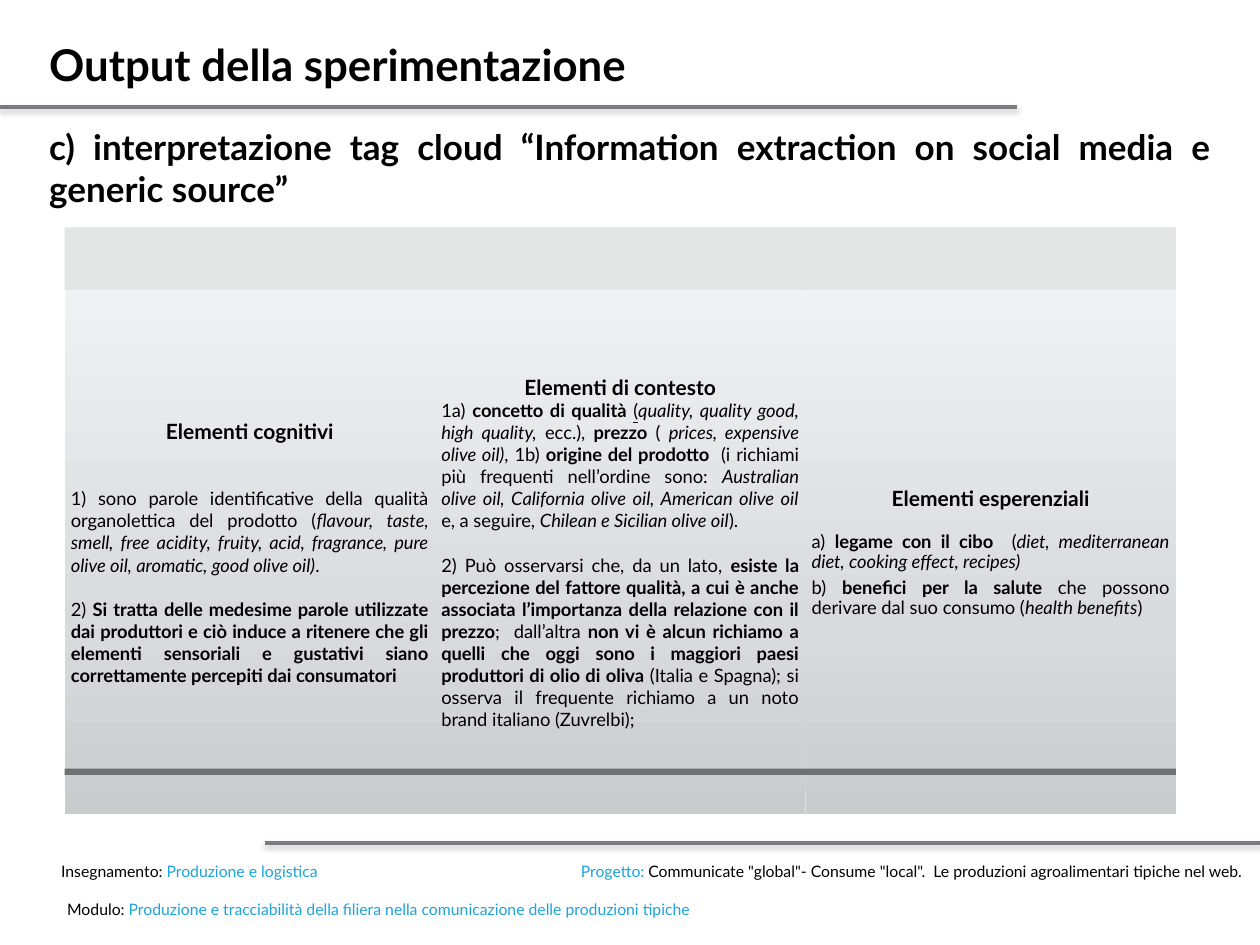
import copy

import pptx
import pptx.dml.color
import pptx.enum.shapes
import pptx.enum.text
import pptx.oxml
import pptx.util
from pptx.enum.text import MSO_ANCHOR, PP_ALIGN
from pptx.util import Pt

FONT = "Lato"
BLACK, BLUE, RULE = "000000", "1EA3DB", "797B7E"
GRADIENT = [(0, "C9CBCD"), (0.35, "D9DADC"), (1, "F0F1F2")]

# Content: text runs are (text, style), with b, i, u for bold, italic, underline
TITLE = "Output della sperimentazione"
SUBTITLE = "c) interpretazione tag cloud “Information extraction on social media e generic source”"

# Each column: heading, then paragraphs as (space before, line spacing, runs)
COLUMNS = [
    ("Elementi cognitivi", [
        (25.2, 1, [
            ("1) sono parole identificative della qualità organolettica del prodotto (", ""),
            ("flavour, taste, smell, free acidity, fruity, acid, fragrance, pure olive oil, "
             "aromatic, good olive oil)", "i"),
            (".", "")]),
        (12.6, 1, [
            ("2) ", ""),
            ("Si tratta delle medesime parole utilizzate dai produttori e ciò induce a ritenere "
             "che gli elementi sensoriali e gustativi siano correttamente percepiti dai "
             "consumatori", "b")]),
    ]),
    ("Elementi di contesto", [
        (0, 1, [
            ("1a) ", ""), ("concetto di qualità ", "b"), ("(", "u"),
            ("quality, quality good, high quality,", "i"), (" ecc.), ", ""),
            ("prezzo", "b"), (" ( ", ""), ("prices, expensive olive oil)", "i"),
            (", 1b) ", ""), ("origine del prodotto  ", "b"),
            ("(i richiami più frequenti nell’ordine sono: ", ""),
            ("Australian olive oil, California olive oil, American olive oil ", "i"),
            ("e, a seguire, ", ""), ("Chilean e Sicilian olive oil", "i"), (").", "")]),
        (12.6, 1, [
            ("2) Può osservarsi che, da un lato, ", ""),
            ("esiste la percezione del fattore qualità, a cui è anche associata l’importanza "
             "della relazione con il prezzo", "b"),
            (";  dall’altra ", ""),
            ("non vi è alcun richiamo a quelli che oggi sono i maggiori paesi produttori di "
             "olio di oliva ", "b"),
            ("(Italia e Spagna); si osserva il frequente richiamo a un noto brand italiano "
             "(Zuvrelbi);", "")]),
    ]),
    ("Elementi esperenziali", [
        (12.6, 0.9, [
            ("a) ", ""), ("legame con il cibo  ", "b"), ("(", ""),
            ("diet, mediterranean diet, cooking effect, recipes)", "i")]),
        (3.7, 0.9, [
            ("b) ", ""), ("benefici per la salute ", "b"),
            ("che possono derivare dal suo consumo (", ""),
            ("health benefits", "i"), (")", "")]),
    ]),
]

# Footer: left, top, width, coloured runs
FOOTER = [
    (311, 492.5, 398.5, [
        ("Progetto: ", BLUE),
        ('Communicate "global"- Consume "local".  Le produzioni agroalimentari tipiche nel web.',
         BLACK)]),
    (29.5, 492.5, 152, [("Insegnamento: ", BLACK), ("Produzione e logistica", BLUE)]),
    (28, 514, 366, [
        ("Modulo: ", BLACK),
        ("Produzione e tracciabilità della filiera nella comunicazione delle produzioni tipiche",
         BLUE)]),
]
RULES = [(0, 581, 61.2), (151.2, 720, 481.7)]  # from x, to x, y

PANEL_LEFT, PANEL_WIDTH = 36.9, 635
COLUMN_TOP, COLUMN_HEIGHT = 166, 299
COLUMN_WIDTH = PANEL_WIDTH / len(COLUMNS)

SHADOW = (
    '<a:effectLst xmlns:a="http://schemas.openxmlformats.org/drawingml/2006/main">'
    '<a:outerShdw blurRad="38100" dist="20320" dir="5400000" rotWithShape="0">'
    '<a:srgbClr val="808080"><a:alpha val="38000"/></a:srgbClr>'
    '</a:outerShdw></a:effectLst>')


def color(value):
    return pptx.dml.color.RGBColor.from_string(value)


def set_margins(frame, margin):
    frame.margin_left = frame.margin_right = Pt(margin)
    frame.margin_top = frame.margin_bottom = Pt(margin)


def style_paragraph(paragraph, size, align, bold=None):
    paragraph.alignment = align
    paragraph.font.name = FONT
    paragraph.font.size = Pt(size)
    paragraph.font.bold = bold
    paragraph.font.color.rgb = color(BLACK)


def add_text(page, left, top, width, height, wrap=True):
    box = page.shapes.add_textbox(Pt(left), Pt(top), Pt(width), Pt(height))
    frame = box.text_frame
    frame.word_wrap = wrap
    set_margins(frame, 0)
    return frame.paragraphs[0]


def add_rectangle(page, left, top, width, height, fill=None):
    shape = page.shapes.add_shape(pptx.enum.shapes.MSO_SHAPE.RECTANGLE,
                                  Pt(left), Pt(top), Pt(width), Pt(height))
    shape.shadow.inherit = False
    shape.line.fill.background()
    if fill:
        shape.fill.solid()
        shape.fill.fore_color.rgb = color(fill)
    return shape


def fill_gradient(shape):
    shape.fill.gradient()
    stop_list = next(shape._element.spPr.iter(pptx.oxml.ns.qn("a:gsLst")))
    stop_list.append(copy.deepcopy(stop_list[0]))
    for stop, (position, value) in zip(shape.fill.gradient_stops, GRADIENT):
        stop.position = position
        stop.color.rgb = color(value)
    shape.fill.gradient_angle = 90


def add_column(page, left, heading, paragraphs):
    shape = add_rectangle(page, left, COLUMN_TOP, COLUMN_WIDTH, COLUMN_HEIGHT)
    fill_gradient(shape)
    frame = shape.text_frame
    frame.word_wrap = True
    frame.vertical_anchor = MSO_ANCHOR.MIDDLE
    set_margins(frame, 3.6)
    frame.paragraphs[0].text = heading
    style_paragraph(frame.paragraphs[0], 12, PP_ALIGN.CENTER, True)
    for before, spacing, runs in paragraphs:
        paragraph = frame.add_paragraph()
        style_paragraph(paragraph, 10.5, PP_ALIGN.JUSTIFY)
        paragraph.space_before = Pt(before)
        paragraph.line_spacing = spacing
        for text, style in runs:
            span = paragraph.add_run()
            span.text = text
            span.font.bold = "b" in style
            span.font.italic = "i" in style
            span.font.underline = "u" in style


def main():
    deck = pptx.Presentation()
    deck.slide_width, deck.slide_height = Pt(720), Pt(540)
    page = deck.slides.add_slide(deck.slide_layouts[6])

    # Shadowed rules
    for start, end, y in RULES:
        rule = page.shapes.add_connector(pptx.enum.shapes.MSO_CONNECTOR.STRAIGHT,
                                         Pt(start), Pt(y), Pt(end), Pt(y))
        rule.line.color.rgb = color(RULE)
        rule.line.width = Pt(2)
        rule._element.spPr.append(pptx.oxml.parse_xml(SHADOW))

    # Footer
    for left, top, width, runs in FOOTER:
        paragraph = add_text(page, left, top, width, 12, wrap=False)
        style_paragraph(paragraph, 9, PP_ALIGN.RIGHT)
        for text, value in runs:
            span = paragraph.add_run()
            span.text = text
            span.font.color.rgb = color(value)

    # Title and subtitle
    for text, top, height, size in [(TITLE, 21.6, 41, 25), (SUBTITLE, 72, 61, 20)]:
        paragraph = add_text(page, 28.1, top, 663.8, height)
        paragraph.text = text
        style_paragraph(paragraph, size, PP_ALIGN.JUSTIFY, True)

    # Panel: header band, columns, lower bar
    add_rectangle(page, PANEL_LEFT, 130, PANEL_WIDTH, 36, "E4E5E5")
    for index, (heading, paragraphs) in enumerate(COLUMNS):
        add_column(page, PANEL_LEFT + index * COLUMN_WIDTH, heading, paragraphs)
    add_rectangle(page, PANEL_LEFT, 439.2, PANEL_WIDTH, 3.6, "6E7072")

    deck.save("out.pptx")


if __name__ == "__main__":
    main()
